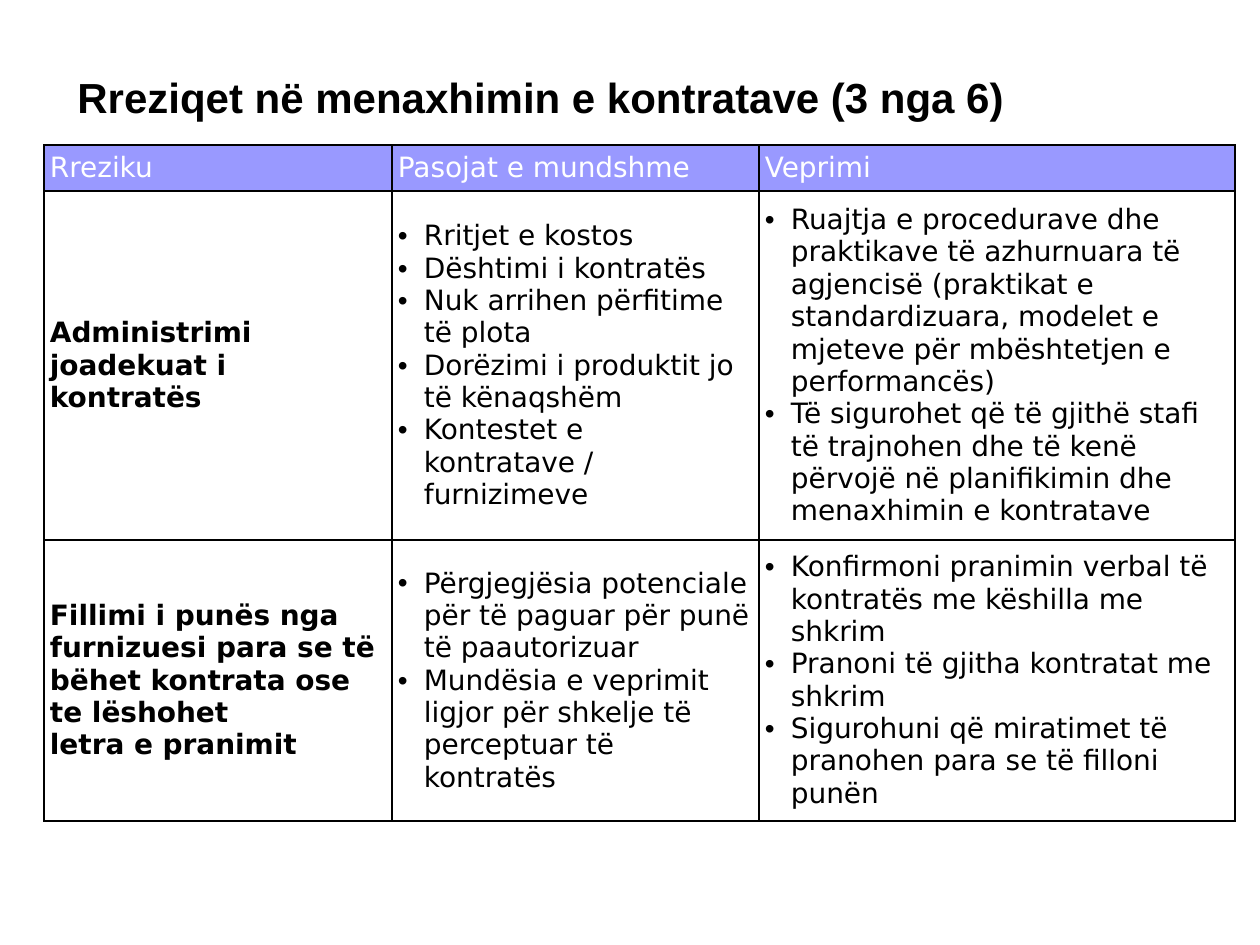
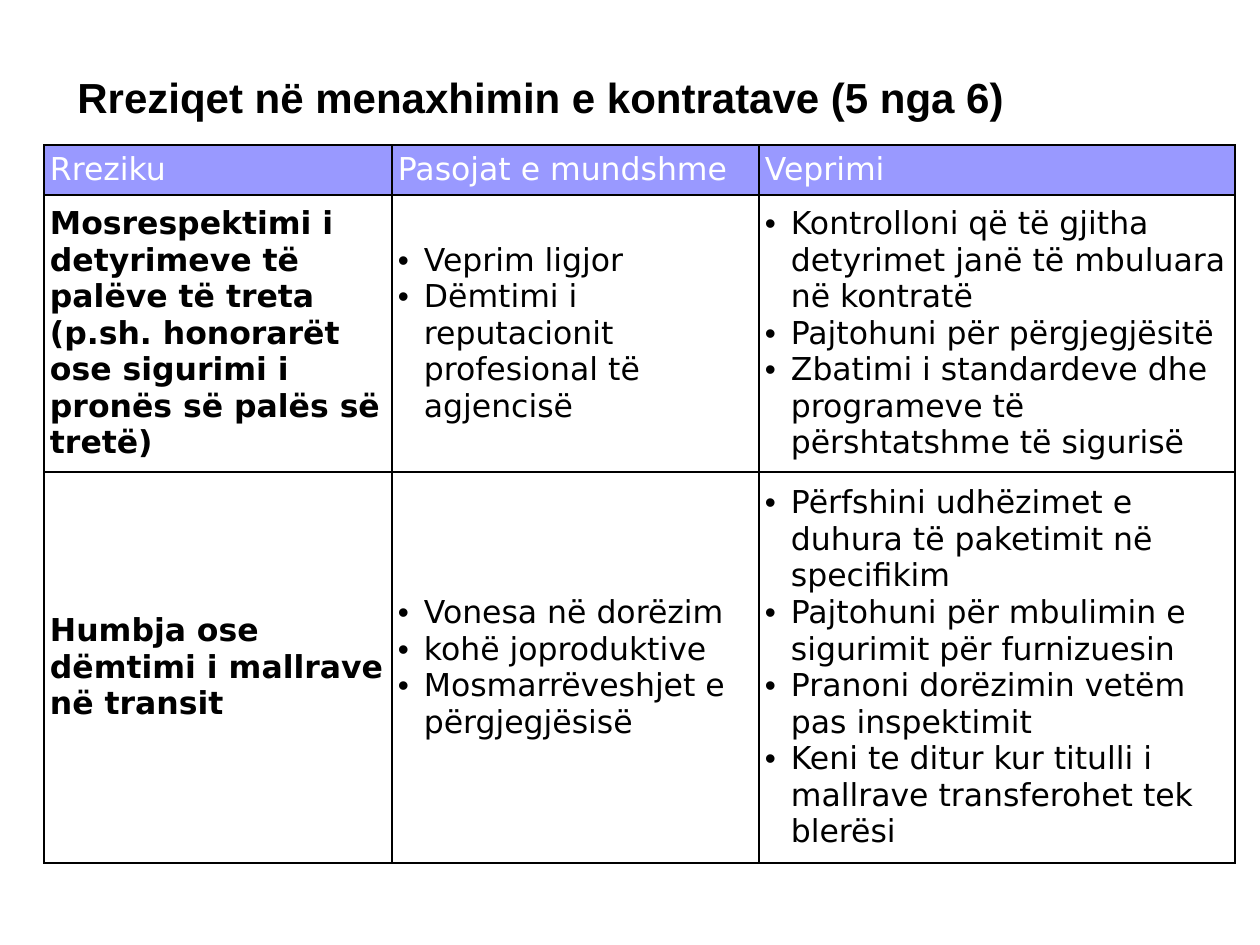
from lxml import etree
from pptx import Presentation, util as u
from pptx.dml.color import RGBColor
from pptx.enum import text
from pptx.oxml.ns import qn

PX = 914400 / 126
COLORS = {"ink": "000000", "header": "9999FF", "header_text": "FFFFFF", "body": "FFFFFF"}
TITLE_FONT, TABLE_FONT = "Arial", "DejaVu Sans"
HEADERS = ["Rreziku", "Pasojat e mundshme", "Veprimi"]
COL_WIDTHS = [348, 367, 476]
INSET, INDENT = 6, 26

# Each risk row: risk paragraphs, consequences, actions
SLIDES = [
    {
        "title": "Rreziqet në menaxhimin e kontratave (3 nga 6)",
        "size": 16,
        "row_heights": [46, 349, 281],
        "risks": [
            [
                ["Administrimi joadekuat i kontratës"],
                ["Rritjet e kostos",
                 "Dështimi i kontratës",
                 "Nuk arrihen përfitime të plota",
                 "Dorëzimi i produktit jo të kënaqshëm",
                 "Kontestet e kontratave / furnizimeve"],
                ["Ruajtja e procedurave dhe praktikave të azhurnuara të agjencisë "
                 "(praktikat e standardizuara, modelet e mjeteve për mbështetjen e performancës)",
                 "Të sigurohet që të gjithë stafi të trajnohen dhe të kenë përvojë "
                 "në planifikimin dhe menaxhimin e kontratave"],
            ],
            [
                ["Fillimi i punës nga furnizuesi para se të bëhet kontrata ose te lëshohet",
                 "letra e pranimit"],
                ["Përgjegjësia potenciale për të paguar për punë të paautorizuar",
                 "Mundësia e veprimit ligjor për shkelje të perceptuar të kontratës"],
                ["Konfirmoni pranimin verbal të kontratës me këshilla me shkrim",
                 "Pranoni të gjitha kontratat me shkrim",
                 "Sigurohuni që miratimet të pranohen para se të filloni punën"],
            ],
        ],
    },
    {
        "title": "Rreziqet në menaxhimin e kontratave (5 nga 6)",
        "size": 18,
        "row_heights": [50, 277, 391],
        "risks": [
            [
                ["Mosrespektimi i detyrimeve të palëve të treta "
                 "(p.sh. honorarët ose sigurimi i pronës së palës së tretë)"],
                ["Veprim ligjor",
                 "Dëmtimi i reputacionit profesional të agjencisë"],
                ["Kontrolloni që të gjitha detyrimet janë të mbuluara në kontratë",
                 "Pajtohuni për përgjegjësitë",
                 "Zbatimi i standardeve dhe programeve të përshtatshme të sigurisë"],
            ],
            [
                ["Humbja ose dëmtimi i mallrave në transit"],
                ["Vonesa në dorëzim",
                 "kohë joproduktive",
                 "Mosmarrëveshjet e përgjegjësisë"],
                ["Përfshini udhëzimet e duhura të paketimit në specifikim",
                 "Pajtohuni për mbulimin e sigurimit për furnizuesin",
                 "Pranoni dorëzimin vetëm pas inspektimit",
                 "Keni te ditur kur titulli i mallrave transferohet tek blerësi"],
            ],
        ],
    },
]


def px(n):
    return u.Emu(round(n * PX))


def add_run(p, words, font, size, color, bold):
    r = p.add_run()
    r.text = words
    r.font.name = font
    r.font.size = u.Pt(size)
    r.font.bold = bold
    r.font.color.rgb = RGBColor.from_string(COLORS[color])


prs = Presentation()
prs.slide_width, prs.slide_height = px(1260), px(945)

for page in SLIDES:
    slide = prs.slides.add_slide(prs.slide_layouts[6])

    # Title
    tf = slide.shapes.add_textbox(px(65), px(65), px(1150), px(63)).text_frame
    tf.word_wrap = True
    add_run(tf.paragraphs[0], page["title"], TITLE_FONT, 24, "ink", True)

    # Risk table
    heights = page["row_heights"]
    table = slide.shapes.add_table(len(heights), len(COL_WIDTHS), px(44), px(145),
                                   px(sum(COL_WIDTHS)), px(sum(heights))).table
    table.first_row = True
    table.horz_banding = False
    for column, width in zip(table.columns, COL_WIDTHS):
        column.width = px(width)
    for row, height in zip(table.rows, heights):
        row.height = px(height)

    rows = [[[header] for header in HEADERS]] + page["risks"]
    for i, row in enumerate(rows):
        for j, paragraphs in enumerate(row):
            cell = table.cell(i, j)
            cell.vertical_anchor = text.MSO_ANCHOR.MIDDLE
            cell.margin_left = cell.margin_right = px(INSET)
            cell.margin_top = cell.margin_bottom = px(INSET)

            # Borders come before the fill in the cell properties
            tcPr = cell._tc.get_or_add_tcPr()
            for side in ("lnL", "lnR", "lnT", "lnB"):
                ln = etree.SubElement(tcPr, qn("a:" + side), w=str(u.Pt(1)))
                line_fill = etree.SubElement(ln, qn("a:solidFill"))
                etree.SubElement(line_fill, qn("a:srgbClr"), val=COLORS["ink"])
            cell.fill.solid()
            cell.fill.fore_color.rgb = RGBColor.from_string(COLORS["body" if i else "header"])

            # Consequences and actions are bulleted, risks are bold
            tf = cell.text_frame
            for k, words in enumerate(paragraphs):
                p = tf.add_paragraph() if k else tf.paragraphs[0]
                if i and j:
                    pPr = p._p.get_or_add_pPr()
                    pPr.set("marL", str(px(INDENT)))
                    pPr.set("indent", str(-px(INDENT)))
                    etree.SubElement(pPr, qn("a:buFont"), typeface="Arial")
                    etree.SubElement(pPr, qn("a:buChar"), char="•")
                add_run(p, words, TABLE_FONT, page["size"],
                        "ink" if i else "header_text", i > 0 and j == 0)

prs.save("out.pptx")
